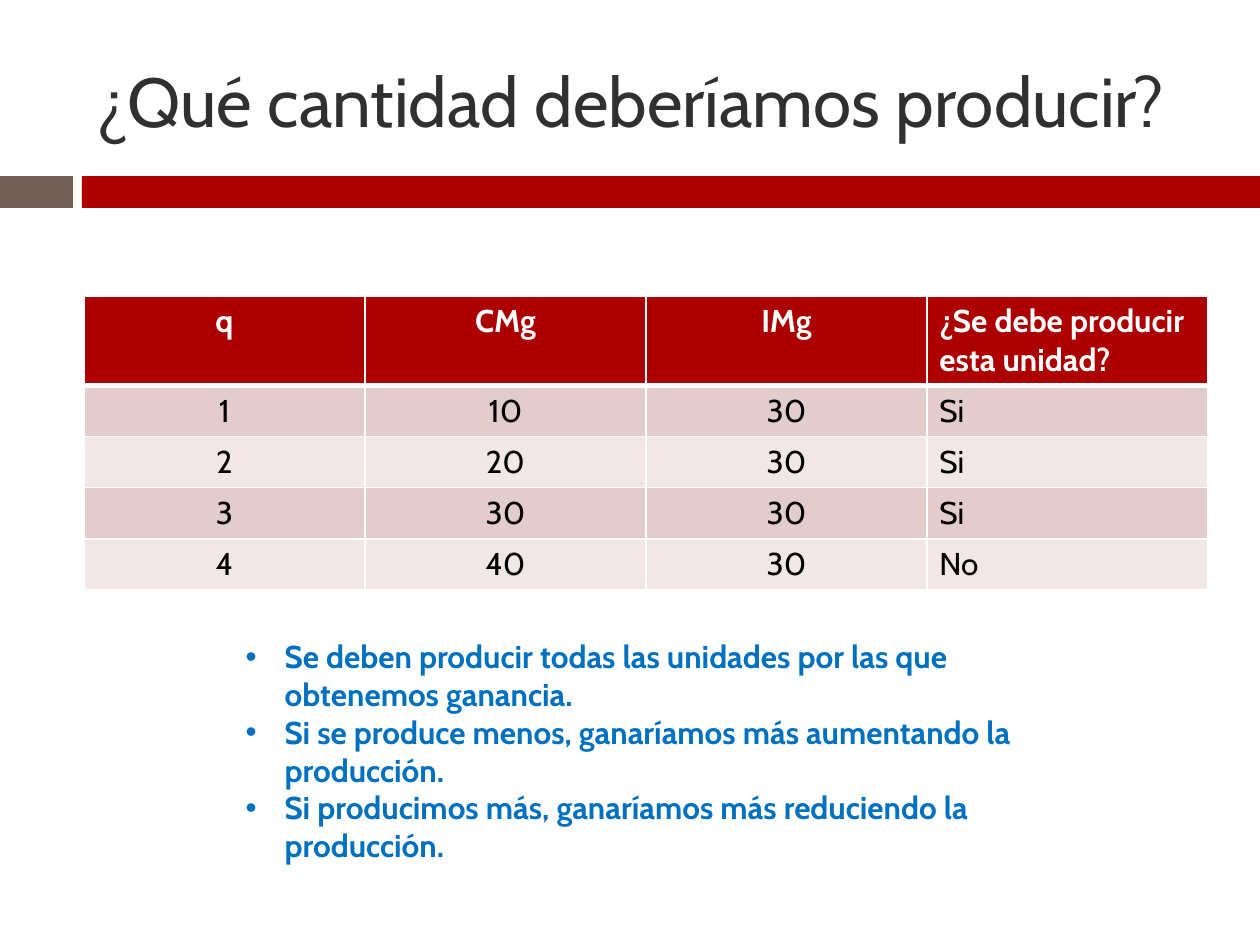
from lxml.etree import SubElement
from pptx import Presentation
from pptx.dml.color import RGBColor
from pptx.enum.shapes import MSO_SHAPE as Shape
from pptx.enum.text import MSO_ANCHOR as Anchor, MSO_AUTO_SIZE as AutoSize, PP_ALIGN as Align
from pptx.oxml.ns import qn
from pptx.util import Emu, Pt

PX_PER_INCH = 126
FONT = "Cabin"
RED, BROWN, WHITE, BLACK = "AD0101", "726056", "FFFFFF", "000000"
TITLE_GREY, BLUE = "303030", "0070C0"
BAND_COLORS = ("F1E7E7", "E3CCCC")

QUANTITIES = [
    ("q", "CMg", "IMg", "¿Se debe producir esta unidad?"),
    ("1", "10", "30", "Si"),
    ("2", "20", "30", "Si"),
    ("3", "30", "30", "Si"),
    ("4", "40", "30", "No"),
]
CONCLUSIONS = [
    "Se deben producir todas las unidades por las que obtenemos ganancia.",
    "Si se produce menos, ganaríamos más aumentando la producción.",
    "Si producimos más, ganaríamos más reduciendo la producción.",
]


def px(length):
    return Emu(round(length * 914400 / PX_PER_INCH))


def color(hex_code):
    return RGBColor.from_string(hex_code)


class SlideBuilder:
    def __init__(self, slide):
        self.slide = slide

    def style(self, paragraph, size, hex_code, bold=False, align=Align.LEFT):
        paragraph.alignment = align
        font = paragraph.font
        font.name, font.size, font.bold = FONT, Pt(size), bold
        font.color.rgb = color(hex_code)

    def place(self, shape, left, top, width, height):
        shape.left, shape.top = px(left), px(top)
        shape.width, shape.height = px(width), px(height)

    def bar(self, left, top, width, height, hex_code):
        bar = self.slide.shapes.add_shape(
            Shape.RECTANGLE, px(left), px(top), px(width), px(height))
        bar.shadow.inherit = False
        bar.fill.solid()
        bar.fill.fore_color.rgb = color(hex_code)
        bar.line.fill.background()

    def title(self, text, *box):
        title = self.slide.shapes.title
        self.place(title, *box)
        frame = title.text_frame
        frame.text = text
        frame.auto_size = AutoSize.NONE
        frame.vertical_anchor = Anchor.MIDDLE
        self.style(frame.paragraphs[0], 39.6, TITLE_GREY)

    def bullets(self, items, *box, indent):
        body = self.slide.placeholders[1]
        self.place(body, *box)
        frame = body.text_frame
        frame.text = "\n".join(items)
        frame.auto_size = AutoSize.NONE
        for paragraph in frame.paragraphs:
            paragraph.space_before = Pt(0)
            properties = paragraph._p.get_or_add_pPr()
            properties.set("marL", str(px(indent)))
            properties.set("indent", str(-px(indent)))
            SubElement(properties, qn("a:buFont"), typeface="Arial")
            SubElement(properties, qn("a:buChar"), char="•")
            self.style(paragraph, 18, BLUE, bold=True)

    def cell_borders(self, cell, **widths):
        """Draw white borders; widths are points by side: L, R, T, B."""
        properties = cell._tc.get_or_add_tcPr()
        for side, width in widths.items():
            line = SubElement(properties, qn(f"a:ln{side}"), w=str(Pt(width)))
            fill = SubElement(line, qn("a:solidFill"))
            SubElement(fill, qn("a:srgbClr"), val=WHITE)

    def table(self, rows, left, top, column_width, header_height, row_height):
        columns = len(rows[0])
        height = header_height + row_height * (len(rows) - 1)
        table = self.slide.shapes.add_table(
            len(rows), columns, px(left), px(top),
            px(column_width * columns), px(height)).table
        for column in table.columns:
            column.width = px(column_width)
        for r, values in enumerate(rows):
            header = r == 0
            table.rows[r].height = px(header_height if header else row_height)
            for c, value in enumerate(values):
                cell = table.cell(r, c)
                cell.text = value
                self.cell_borders(cell, L=1, R=1, T=3 if r == 1 else 1, B=3 if header else 1)
                cell.fill.solid()
                cell.fill.fore_color.rgb = color(RED if header else BAND_COLORS[r % 2])
                self.style(cell.text_frame.paragraphs[0], 18,
                           WHITE if header else BLACK, bold=header,
                           align=Align.LEFT if c == columns - 1 else Align.CENTER)


def main():
    deck = Presentation()
    deck.slide_width, deck.slide_height = px(1260), px(945)
    builder = SlideBuilder(deck.slides.add_slide(deck.slide_layouts[1]))
    builder.bar(0, 176, 73, 32, BROWN)
    builder.bar(82, 176, 1178, 32, RED)
    builder.title("¿Qué cantidad deberíamos producir?", 84, 32, 1124, 136)
    builder.table(QUANTITIES, 84, 296, column_width=281, header_height=88, row_height=51)
    builder.bullets(CONCLUSIONS, 233, 631, 883, 242, indent=39)
    deck.save("out.pptx")


if __name__ == "__main__":
    main()
